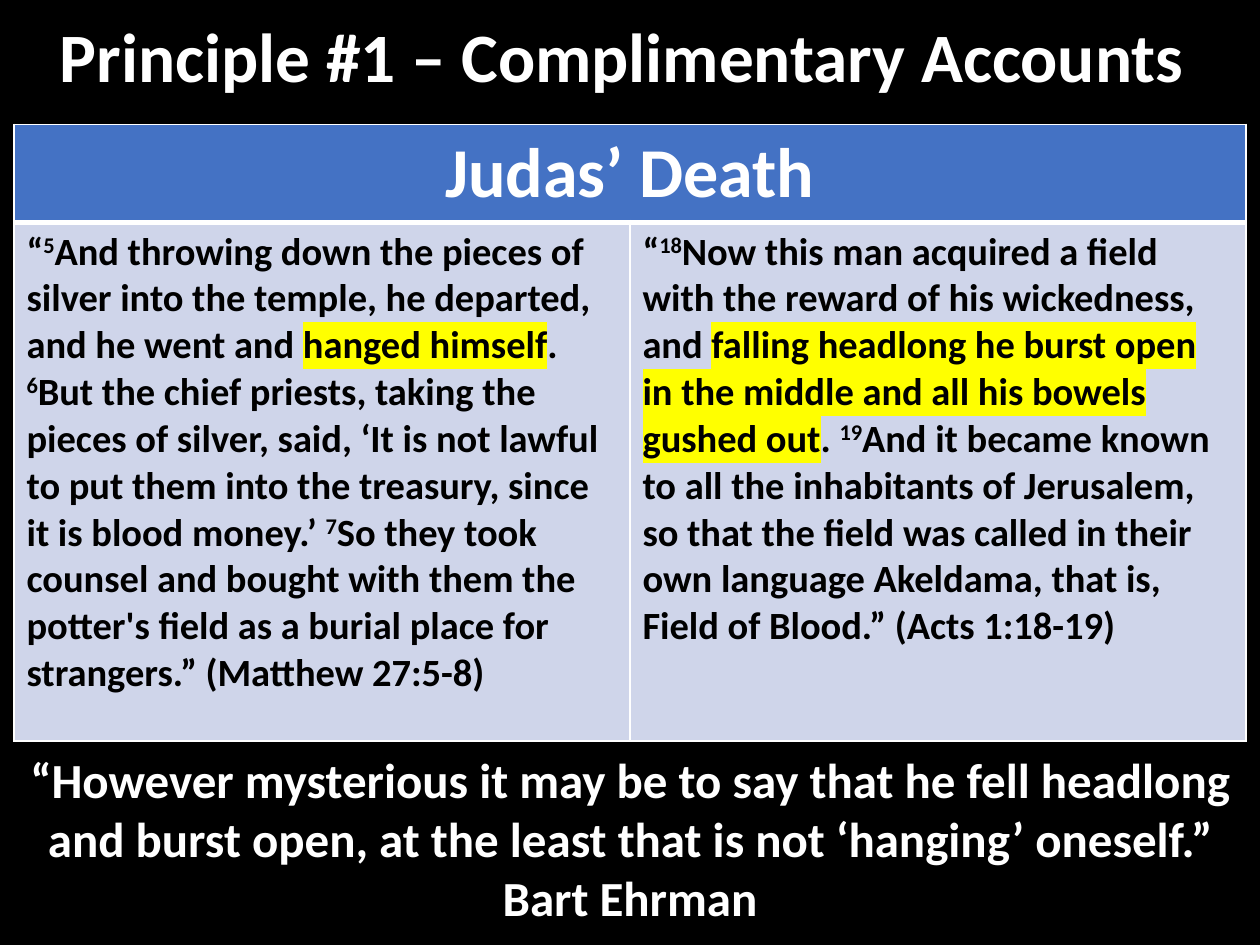
"""Build a slide that sets two accounts of one event side by side."""
from dataclasses import dataclass

from lxml import etree
from pptx import Presentation
from pptx.dml.color import RGBColor
from pptx.enum import text
from pptx.oxml import ns
from pptx.util import Pt

COLORS = {"back": "000000", "light": "FFFFFF", "dark": "000000",
          "header": "4472C4", "body": "CFD5EA", "mark": "FFFF00"}
FONT = "Calibri"
LEFT, WIDTH = 8, 704
HEADER_H, BODY_H = 55, 296.5


@dataclass(frozen=True)
class Span:
    text: str
    raised: bool = False
    marked: bool = False


ACCOUNTS = [
    [Span("“"), Span("5", raised=True),
     Span("And throwing down the pieces of silver into the temple, "
          "he departed, and he went and "),
     Span("hanged himself", marked=True), Span(". "), Span("6", raised=True),
     Span("But the chief priests, taking the pieces of silver, said, "
          "‘It is not lawful to put them into the treasury, since it is "
          "blood money.’ "),
     Span("7", raised=True),
     Span("So they took counsel and bought with them the potter's field as "
          "a burial place for strangers.” (Matthew 27:5-8)")],
    [Span("“"), Span("18", raised=True),
     Span("Now this man acquired a field with the reward of his wickedness, "
          "and "),
     Span("falling headlong he burst open in the middle and all his bowels "
          "gushed out", marked=True),
     Span(". "), Span("19", raised=True),
     Span("And it became known to all the inhabitants of Jerusalem, so that "
          "the field was called in their own language Akeldama, that is, "
          "Field of Blood.” (Acts 1:18-19)")],
]


def rgb(name: str) -> RGBColor:
    return RGBColor.from_string(COLORS[name])


def format_run(r, size: float, color: str) -> None:
    r.font.size, r.font.bold = Pt(size), True
    r.font.color.rgb = rgb(color)
    r.font.name = FONT


def set_centred(tf, content: str, size: float) -> None:
    tf.text = content
    tf.word_wrap = True
    tf.vertical_anchor = text.MSO_ANCHOR.MIDDLE
    p = tf.paragraphs[0]
    p.alignment = text.PP_ALIGN.CENTER
    format_run(p.runs[0], size, "light")


def add_span(p, span: Span) -> None:
    r = p.add_run()
    r.text = span.text
    format_run(r, 22, "dark")
    props = r._r.get_or_add_rPr()
    if span.raised:
        props.set("baseline", "30000")
    if span.marked:
        mark = etree.Element(ns.qn("a:highlight"))
        etree.SubElement(mark, ns.qn("a:srgbClr"), val=COLORS["mark"])
        props.find(ns.qn("a:solidFill")).addnext(mark)


def style_cell(cell, fill: str, top: float, bottom: float) -> None:
    cell.fill.solid()
    cell.fill.fore_color.rgb = rgb(fill)
    props = cell._tc.get_or_add_tcPr()
    edges = {"L": 1, "R": 1, "T": top, "B": bottom}
    for i, (side, width) in enumerate(edges.items()):
        line = etree.Element(ns.qn(f"a:ln{side}"), w=str(Pt(width)))
        paint = etree.SubElement(line, ns.qn("a:solidFill"))
        etree.SubElement(paint, ns.qn("a:srgbClr"), val=COLORS["light"])
        props.insert(i, line)


def add_accounts(s) -> None:
    table = s.shapes.add_table(2, 2, Pt(LEFT), Pt(71), Pt(WIDTH),
                               Pt(HEADER_H + BODY_H)).table
    table.rows[0].height, table.rows[1].height = Pt(HEADER_H), Pt(BODY_H)
    for col, spans in enumerate(ACCOUNTS):
        style_cell(table.cell(0, col), "header", 1, 3)
        cell = table.cell(1, col)
        style_cell(cell, "body", 3, 1)
        for span in spans:
            add_span(cell.text_frame.paragraphs[0], span)
    header = table.cell(0, 0)
    header.merge(table.cell(0, 1))
    set_centred(header.text_frame, "Judas’ Death", 40)
    header.vertical_anchor = text.MSO_ANCHOR.TOP


def main() -> None:
    prs = Presentation()
    prs.slide_width, prs.slide_height = Pt(720), Pt(540)
    s = prs.slides.add_slide(prs.slide_layouts[5])
    s.background.fill.solid()
    s.background.fill.fore_color.rgb = rgb("back")

    title = s.shapes.title
    title.left, title.top = Pt(LEFT), Pt(8)
    title.width, title.height = Pt(WIDTH), Pt(53)
    set_centred(title.text_frame, "Principle #1 – Complimentary Accounts ", 39.6)
    title.text_frame.auto_size = text.MSO_AUTO_SIZE.NONE
    title.text_frame.paragraphs[0].line_spacing = 0.9

    add_accounts(s)

    quote = s.shapes.add_textbox(Pt(LEFT), Pt(422.5), Pt(WIDTH), Pt(112.5))
    set_centred(quote.text_frame,
                "“However mysterious it may be to say that he fell headlong "
                "and burst open, at the least that is not ‘hanging’ oneself.” "
                "Bart Ehrman", 28)
    quote.text_frame.paragraphs[0].space_before = Pt(10)
    prs.save("out.pptx")


if __name__ == "__main__":
    main()
